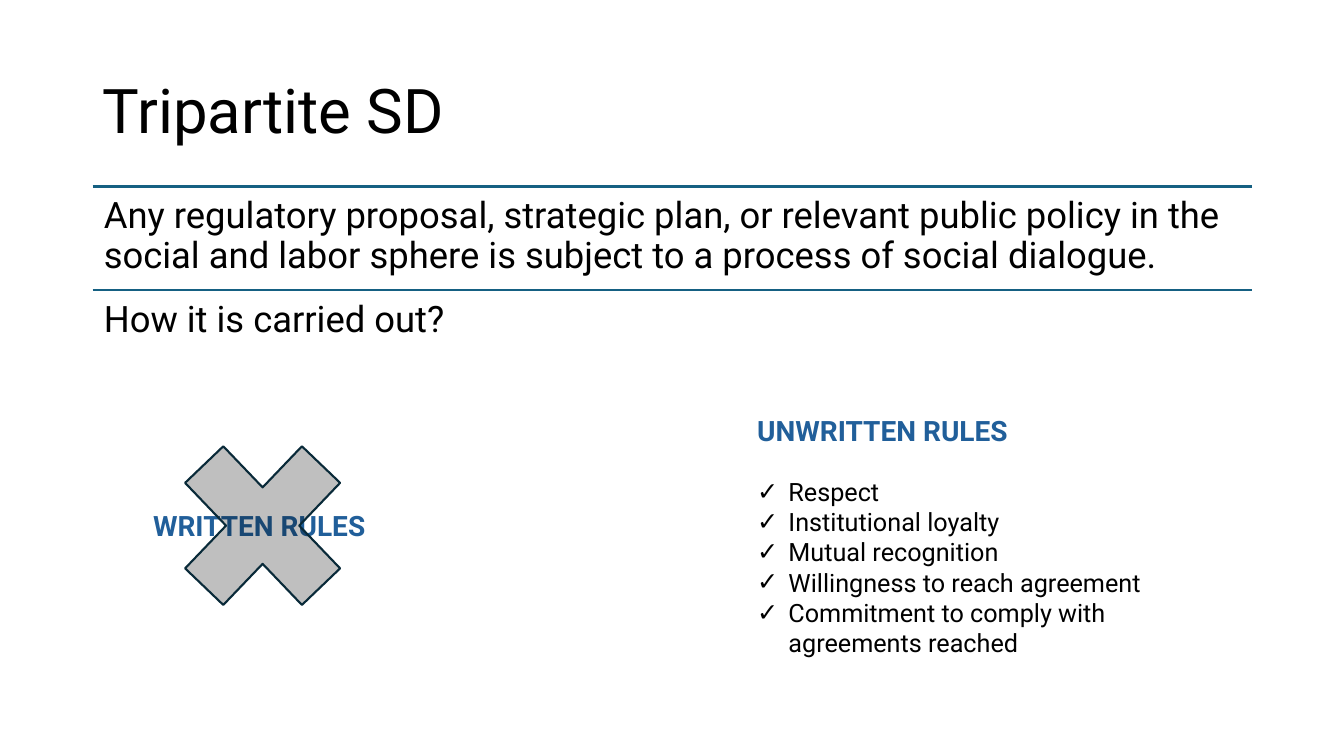
import dataclasses

import pptx
import pptx.dml.color
import pptx.enum.shapes
import pptx.enum.text
import pptx.oxml.ns
import pptx.util
from lxml import etree

Inches = pptx.util.Inches
Pt = pptx.util.Pt
RGB = pptx.dml.color.RGBColor.from_string


@dataclasses.dataclass(frozen=True)
class Theme:
    font: str = "Roboto"
    ink: str = "000000"
    heading: str = "215F9A"
    rule: str = "156082"
    cross_line: str = "092A39"
    cross_opacity: int = 25
    title_size: int = 44
    statement_size: int = 26
    heading_size: int = 20
    list_size: int = 18
    line_width: float = 1.5


THEME = Theme()

STATEMENTS = [
    "Any regulatory proposal, strategic plan, or relevant public policy in the "
    "social and labor sphere is subject to a process of social dialogue.",
    "How it is carried out?",
]
UNWRITTEN_RULES = [
    "Respect",
    "Institutional loyalty",
    "Mutual recognition",
    "Willingness to reach agreement",
    "Commitment to comply with agreements reached",
]


def add_xml(parent, tag, **attributes):
    return etree.SubElement(parent, pptx.oxml.ns.qn(tag), attributes)


def place(shape, left, top, width, height):
    shape.left, shape.top = Inches(left), Inches(top)
    shape.width, shape.height = Inches(width), Inches(height)


def style(paragraph, size, color=THEME.ink, bold=False):
    paragraph.font.name = THEME.font
    paragraph.font.size = Pt(size)
    paragraph.font.color.rgb = RGB(color)
    paragraph.font.bold = bold


def set_bullet(paragraph, left, hanging=0, mark=None):
    """Indent a paragraph and give it a bullet mark, or none."""
    properties = paragraph._p.get_or_add_pPr()
    properties.set("marL", str(Inches(left)))
    properties.set("indent", str(-Inches(hanging)))
    if mark:
        add_xml(properties, "a:buChar", char=mark)
    else:
        add_xml(properties, "a:buNone")


def fill_title(title, left, top, width, height):
    place(title, left, top, width, height)
    frame = title.text_frame
    frame.text = "Tripartite SD"
    frame.vertical_anchor = pptx.enum.text.MSO_ANCHOR.MIDDLE
    heading = frame.paragraphs[0]
    heading.alignment = pptx.enum.text.PP_ALIGN.LEFT
    heading.line_spacing = 0.9
    style(heading, THEME.title_size)


def add_statements(slide, left, top, width, height):
    """Stack the statements in equal rows, each under a rule."""
    row_height = height / len(STATEMENTS)
    for row, statement in enumerate(STATEMENTS):
        row_top = top + row * row_height
        rule = slide.shapes.add_connector(
            pptx.enum.shapes.MSO_CONNECTOR.STRAIGHT,
            Inches(left), Inches(row_top), Inches(left + width), Inches(row_top))
        rule.line.color.rgb = RGB(THEME.rule)
        rule.line.width = Pt(THEME.line_width)
        add_xml(rule._element.spPr, "a:effectLst")

        box = slide.shapes.add_textbox(
            Inches(left), Inches(row_top), Inches(width), Inches(row_height))
        frame = box.text_frame
        frame.word_wrap = True
        frame.margin_left = frame.margin_right = Inches(0.11)
        frame.margin_top = frame.margin_bottom = Inches(0.11)
        frame.text = statement
        frame.paragraphs[0].line_spacing = 0.9
        style(frame.paragraphs[0], THEME.statement_size)


def fill_unwritten_rules(body, left, top, width, height):
    place(body, left, top, width, height)
    frame = body.text_frame
    frame.auto_size = pptx.enum.text.MSO_AUTO_SIZE.NONE
    frame.text = "\n".join(["UNWRITTEN RULES"] + UNWRITTEN_RULES)
    heading, *rules = frame.paragraphs
    set_bullet(heading, 0.5)
    heading.space_before = Pt(0)
    style(heading, THEME.heading_size, THEME.heading, bold=True)
    for rule in rules:
        set_bullet(rule, 0.81, hanging=0.31, mark="✓")
        rule.space_before = Pt(21 if rule is rules[0] else 0)
        style(rule, THEME.list_size)


def add_written_rules(slide, left, top, width, height):
    """Cross out the heading that sits in the middle of the box."""
    label = slide.shapes.add_textbox(
        Inches(left), Inches(top), Inches(width), Inches(height))
    frame = label.text_frame
    frame.word_wrap = True
    frame.vertical_anchor = pptx.enum.text.MSO_ANCHOR.MIDDLE
    frame.text = "WRITTEN RULES"
    set_bullet(frame.paragraphs[0], 0.5)
    style(frame.paragraphs[0], THEME.heading_size, THEME.heading, bold=True)

    cross = slide.shapes.add_shape(
        pptx.enum.shapes.MSO_SHAPE.MATH_MULTIPLY,
        Inches(left + 0.57), Inches(top), Inches(2.23), Inches(height))
    cross.shadow.inherit = False
    cross.fill.solid()
    cross.fill.fore_color.rgb = RGB(THEME.ink)
    tint = cross._element.spPr.find(".//" + pptx.oxml.ns.qn("a:srgbClr"))
    add_xml(tint, "a:alpha", val=str(THEME.cross_opacity * 1000))
    cross.line.color.rgb = RGB(THEME.cross_line)
    cross.line.width = Pt(THEME.line_width)


def main():
    deck = pptx.Presentation()
    deck.slide_width, deck.slide_height = Inches(13.33), Inches(7.5)
    slide = deck.slides.add_slide(deck.slide_layouts[1])
    fill_title(slide.shapes.title, 0.92, 0.4, 11.5, 1.45)
    add_statements(slide, 0.92, 1.85, 11.5, 2.05)
    fill_unwritten_rules(slide.placeholders[1], 6.91, 4.05, 5.3, 2.56)
    add_written_rules(slide, 0.92, 4.05, 4, 2.33)
    deck.save("out.pptx")


if __name__ == "__main__":
    main()
